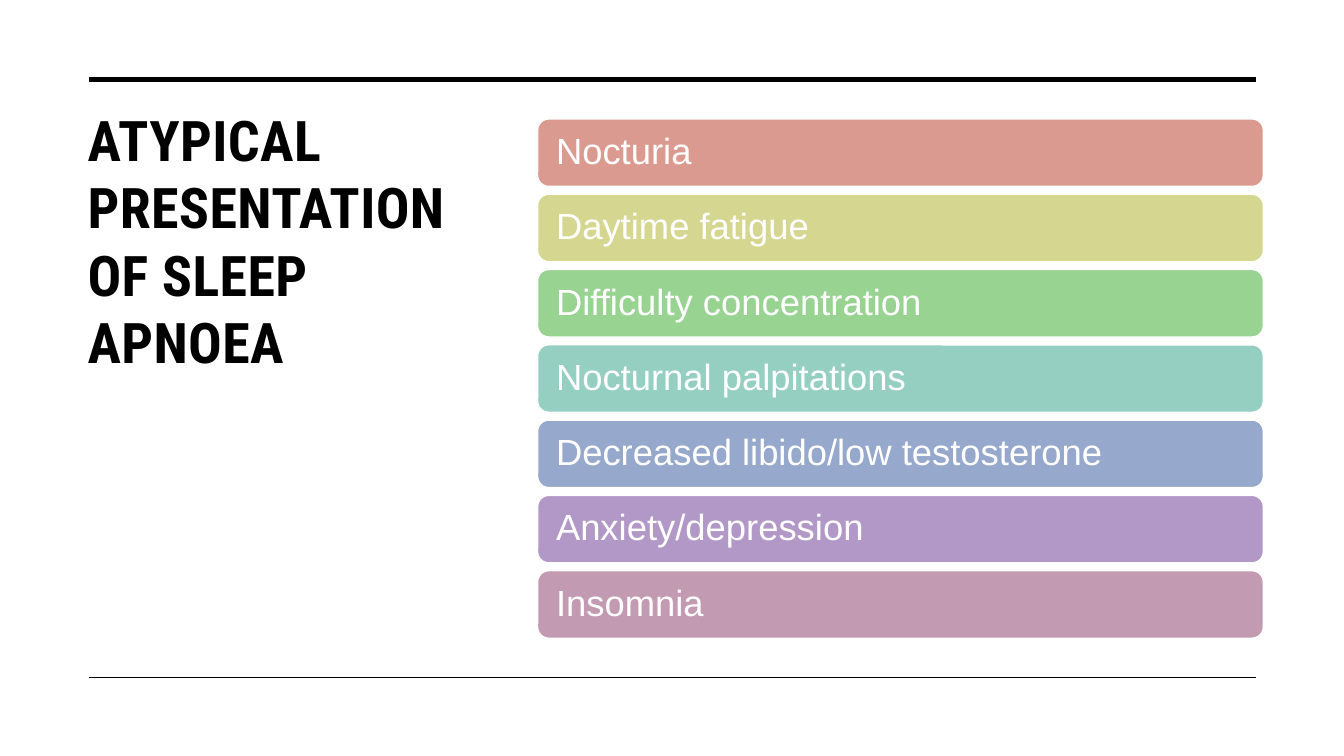
from dataclasses import dataclass
from typing import Any

from lxml.etree import SubElement
from pptx import Presentation
from pptx.dml.color import RGBColor as RGB
from pptx.enum.shapes import MSO_CONNECTOR as Conn, MSO_SHAPE as Shape
from pptx.enum.text import MSO_ANCHOR as Anchor, PP_ALIGN as Align
from pptx.oxml.ns import qn
from pptx.util import Inches, Pt

BLACK = RGB(0x00, 0x00, 0x00)
WHITE = RGB(0xFF, 0xFF, 0xFF)
CORAL = RGB(0xDB, 0x9A, 0x8F)
OLIVE = RGB(0xD5, 0xD7, 0x91)
GREEN = RGB(0x98, 0xD3, 0x92)
TEAL = RGB(0x94, 0xCF, 0xC2)
BLUE = RGB(0x96, 0xA8, 0xCB)
VIOLET = RGB(0xB1, 0x98, 0xC6)
MAUVE = RGB(0xC2, 0x9A, 0xB1)

WIDTH, HEIGHT = Inches(13.33), Inches(7.5)
BAR_TOP, BAR_STEP, BAR_HEIGHT = 15.73, 9.96, 8.93

TITLE_FONT = {"name": "Roboto Condensed", "size": Pt(40), "bold": True}
BAR_FONT = {"name": "Arial", "size": Pt(26)}
BAR_FRAME = {
    "word_wrap": True,
    "vertical_anchor": Anchor.MIDDLE,
    "margin_left": Inches(0.15),
    "margin_right": Inches(0.15),
}


@dataclass
class Rule:
    y: float
    weight: float


@dataclass
class Symptom:
    text: str
    color: RGB


RULES = [Rule(10.53, 3.5), Rule(89.6, 1)]
SYMPTOMS = [
    Symptom("Nocturia", CORAL),
    Symptom("Daytime fatigue", OLIVE),
    Symptom("Difficulty concentration", GREEN),
    Symptom("Nocturnal palpitations", TEAL),
    Symptom("Decreased libido/low testosterone", BLUE),
    Symptom("Anxiety/depression", VIOLET),
    Symptom("Insomnia", MAUVE),
]


def across(percent: float) -> int:
    return round(WIDTH * percent / 100)


def down(percent: float) -> int:
    return round(HEIGHT * percent / 100)


def apply(target: Any, values: dict[str, Any]) -> None:
    for name, value in values.items():
        setattr(target, name, value)


def write(p: Any, text: str, font: dict[str, Any], color: RGB) -> Any:
    p.alignment = Align.LEFT
    r = p.add_run()
    r.text = text
    apply(r.font, font)
    r.font.color.rgb = color
    return r


def draw_title(s: Any, text: str) -> None:
    sp = s.shapes.add_textbox(across(5.78), down(13.33), across(30), down(64.27))
    tf = sp.text_frame
    tf.word_wrap = True
    r = write(tf.paragraphs[0], text, TITLE_FONT, BLACK)
    r.font._element.set("spc", "30")


def draw_rule(s: Any, rule: Rule) -> None:
    y = down(rule.y)
    line = s.shapes.add_connector(Conn.STRAIGHT, across(6.6), y, across(93.47), y)
    line.line.color.rgb = BLACK
    line.line.width = Pt(rule.weight)
    SubElement(line._element.spPr, qn("a:effectLst"))


def draw_symptom(s: Any, row: int, symptom: Symptom) -> None:
    sp = s.shapes.add_shape(
        Shape.ROUNDED_RECTANGLE,
        across(40), down(BAR_TOP + row * BAR_STEP), across(54), down(BAR_HEIGHT),
    )
    sp.shadow.inherit = False
    sp.fill.solid()
    sp.fill.fore_color.rgb = symptom.color
    sp.line.color.rgb = WHITE
    sp.line.width = Pt(1)
    tf = sp.text_frame
    apply(tf, BAR_FRAME)
    p = tf.paragraphs[0]
    p.line_spacing = 0.9
    write(p, symptom.text, BAR_FONT, WHITE)


def main() -> None:
    prs = Presentation()
    prs.slide_width, prs.slide_height = WIDTH, HEIGHT
    s = prs.slides.add_slide(prs.slide_layouts[6])
    draw_title(s, "ATYPICAL PRESENTATION OF SLEEP APNOEA")
    for rule in RULES:
        draw_rule(s, rule)
    for row, symptom in enumerate(SYMPTOMS):
        draw_symptom(s, row, symptom)
    prs.save("out.pptx")


if __name__ == "__main__":
    main()
